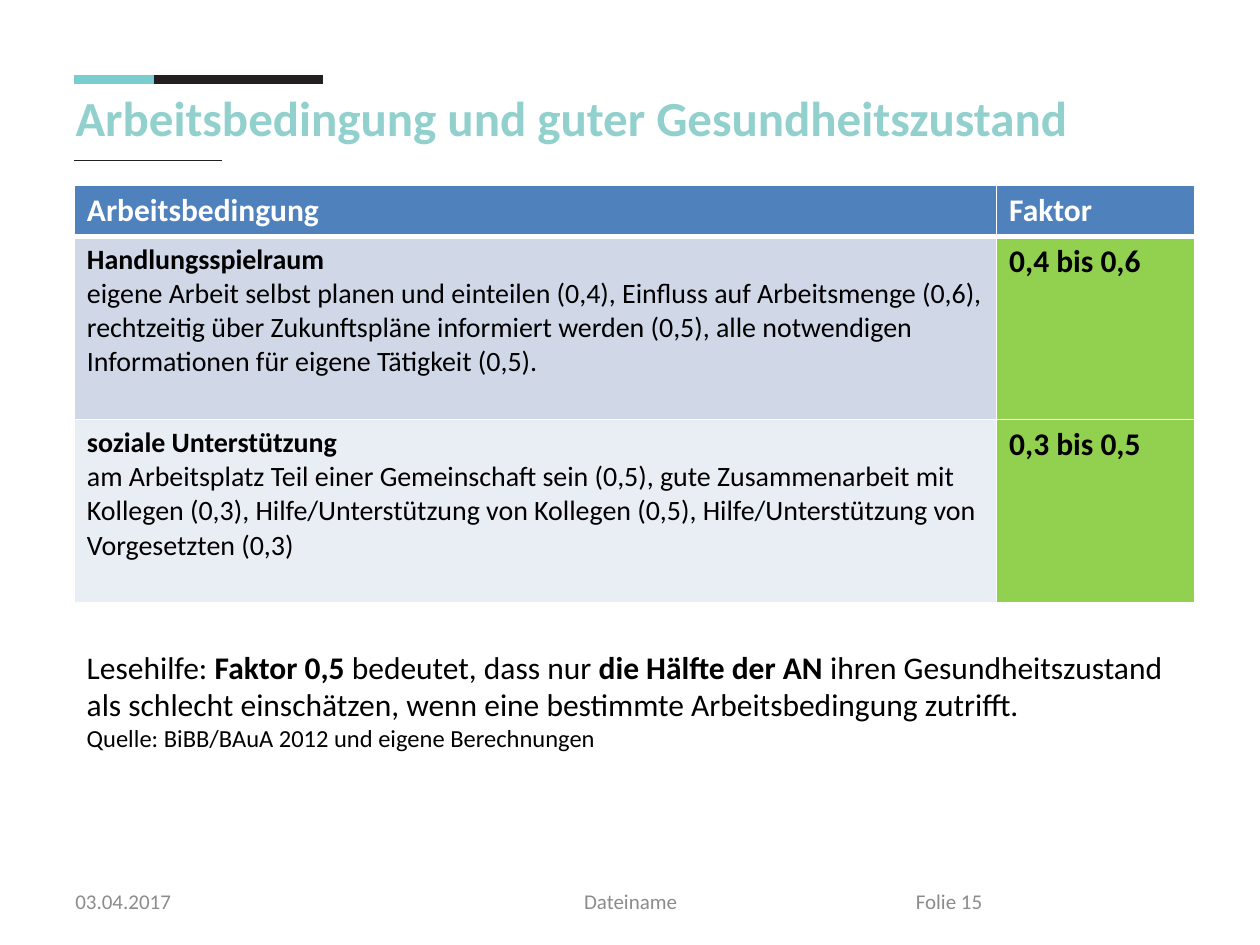
from dataclasses import dataclass

import lxml.etree
import pptx
import pptx.dml.color
import pptx.enum.shapes
import pptx.enum.text
import pptx.oxml.ns
import pptx.util

RGBColor = pptx.dml.color.RGBColor
Pt = pptx.util.Pt
PP_ALIGN = pptx.enum.text.PP_ALIGN
ANCHOR = pptx.enum.text.MSO_ANCHOR
qn = pptx.oxml.ns.qn

AQUA = RGBColor(0x78, 0xCD, 0xD0)
TITLE_AQUA = RGBColor(0x91, 0xD0, 0xCC)
INK = RGBColor(0x23, 0x1F, 0x20)
GREY = RGBColor(0x8C, 0x8C, 0x8C)
BLACK = RGBColor(0, 0, 0)
WHITE = RGBColor(0xFF, 0xFF, 0xFF)
HEADER_BLUE = RGBColor(0x4F, 0x81, 0xBD)
ROW_BLUE = RGBColor(0xD0, 0xD8, 0xE8)
ROW_PALE = RGBColor(0xE9, 0xED, 0xF4)
FACTOR_GREEN = RGBColor(0x92, 0xD0, 0x50)

WIDTH = pptx.util.Inches(10)
HEIGHT = pptx.util.Inches(7.5)
MARGIN = 5.9


@dataclass(frozen=True)
class Rule:
    start: float
    end: float
    top: float
    color: RGBColor
    weight: float


@dataclass(frozen=True)
class Span:
    text: str
    size: float
    bold: bool = False
    color: RGBColor = BLACK


@dataclass(frozen=True)
class Footer:
    text: str
    left: float
    width: float
    align: PP_ALIGN = PP_ALIGN.LEFT


@dataclass(frozen=True)
class Condition:
    name: str
    details: str
    factor: str
    fill: RGBColor


RULES = [
    Rule(MARGIN, 12.2, 8.4, AQUA, 5),
    Rule(12.2, 25.6, 8.4, INK, 5),
    Rule(MARGIN, 17.6, 16.93, INK, 0.5),
]
FOOTERS = [
    Footer("03.04.2017", 5, 23.3),
    Footer("Dateiname", 34.2, 31.7, PP_ALIGN.CENTER),
    Footer("Folie 15", 71.7, 23.3),
]
CONDITIONS = [
    Condition(
        "Handlungsspielraum",
        "eigene Arbeit selbst planen und einteilen (0,4), Einfluss auf Arbeitsmenge (0,6), "
        "rechtzeitig über Zukunftspläne informiert werden (0,5), alle notwendigen "
        "Informationen für eigene Tätigkeit (0,5).",
        "0,4 bis 0,6", ROW_BLUE),
    Condition(
        "soziale Unterstützung",
        "am Arbeitsplatz Teil einer Gemeinschaft sein (0,5), gute Zusammenarbeit mit "
        "Kollegen (0,3), Hilfe/Unterstützung von Kollegen (0,5), Hilfe/Unterstützung von "
        "Vorgesetzten (0,3)",
        "0,3 bis 0,5", ROW_PALE),
]
READING_AID = [
    [
        Span("Lesehilfe: ", 18),
        Span("Faktor 0,5 ", 18, True),
        Span("bedeutet, dass nur ", 18),
        Span("die Hälfte der AN ", 18, True),
        Span("ihren Gesundheitszustand als schlecht einschätzen, wenn eine bestimmte "
             "Arbeitsbedingung zutrifft.", 18),
    ],
    [Span("Quelle: BiBB/BAuA 2012 und eigene Berechnungen", 14)],
]


def across(share: float) -> int:
    return round(WIDTH * share / 100)


def down(share: float) -> int:
    return round(HEIGHT * share / 100)


def place(left: float, top: float, width: float, height: float) -> tuple:
    return across(left), down(top), across(width), down(height)


def write(frame, paragraphs: list, align: PP_ALIGN = PP_ALIGN.LEFT) -> None:
    frame.word_wrap = True
    for index, spans in enumerate(paragraphs):
        paragraph = frame.add_paragraph() if index else frame.paragraphs[0]
        paragraph.alignment = align
        for span in spans:
            run = paragraph.add_run()
            run.text = span.text
            run.font.color.rgb = span.color
            look = {"name": "Calibri", "size": Pt(span.size), "bold": span.bold}
            for attribute, value in look.items():
                setattr(run.font, attribute, value)


def draw_rule(slide, rule: Rule) -> None:
    line = slide.shapes.add_connector(
        pptx.enum.shapes.MSO_CONNECTOR.STRAIGHT,
        across(rule.start), down(rule.top), across(rule.end), down(rule.top))
    line.line.color.rgb = rule.color
    line.line.width = Pt(rule.weight)
    lxml.etree.SubElement(line.element.spPr, qn("a:effectLst"))


def draw_footer(slide, footer: Footer) -> None:
    box = slide.shapes.add_textbox(*place(footer.left, 92.67, footer.width, 5.33))
    box.text_frame.vertical_anchor = ANCHOR.MIDDLE
    write(box.text_frame, [[Span(footer.text, 12, color=GREY)]], footer.align)


def border(cell, bottom: float) -> None:
    properties = cell._tc.get_or_add_tcPr()
    for position, (side, weight) in enumerate(
            {"lnL": 1, "lnR": 1, "lnT": 1, "lnB": bottom}.items()):
        edge = lxml.etree.Element(qn(f"a:{side}"), w=str(Pt(weight)))
        fill = lxml.etree.SubElement(edge, qn("a:solidFill"))
        lxml.etree.SubElement(fill, qn("a:srgbClr"), val=str(WHITE))
        properties.insert(position, edge)


def fill_cell(cell, paragraphs: list, fill: RGBColor, bottom: float = 1) -> None:
    write(cell.text_frame, paragraphs)
    cell.fill.solid()
    cell.fill.fore_color.rgb = fill
    border(cell, bottom)


def draw_conditions(slide) -> None:
    table = slide.shapes.add_table(
        len(CONDITIONS) + 1, 2, *place(MARGIN, 19.6, 88.9, 44.2)).table
    for column, share in zip(table.columns, (73.2, 15.7)):
        column.width = across(share)
    for row, share in zip(table.rows, (5.4, 19.4, 19.4)):
        row.height = down(share)
    for column, heading in enumerate(("Arbeitsbedingung", "Faktor")):
        fill_cell(table.cell(0, column), [[Span(heading, 18, True, WHITE)]], HEADER_BLUE, 3)
    for row, condition in enumerate(CONDITIONS, 1):
        description = [[Span(condition.name, 16, True)], [Span(condition.details, 16)]]
        fill_cell(table.cell(row, 0), description, condition.fill)
        fill_cell(table.cell(row, 1), [[Span(condition.factor, 18, True)]], FACTOR_GREEN)


def main() -> None:
    deck = pptx.Presentation()
    deck.slide_width, deck.slide_height = WIDTH, HEIGHT
    slide = deck.slides.add_slide(deck.slide_layouts[5])
    for rule in RULES:
        draw_rule(slide, rule)

    title = slide.shapes.title
    title.left, title.top, title.width, title.height = place(5, 4, 90, 16.67)
    title.text_frame.vertical_anchor = ANCHOR.MIDDLE
    write(title.text_frame,
          [[Span("Arbeitsbedingung und guter Gesundheitszustand", 28, True, TITLE_AQUA)]])

    for footer in FOOTERS:
        draw_footer(slide, footer)
    draw_conditions(slide)
    reading_aid = slide.shapes.add_textbox(*place(MARGIN, 67.87, 87.4, 16.67))
    write(reading_aid.text_frame, READING_AID)
    deck.save("out.pptx")


if __name__ == "__main__":
    main()
